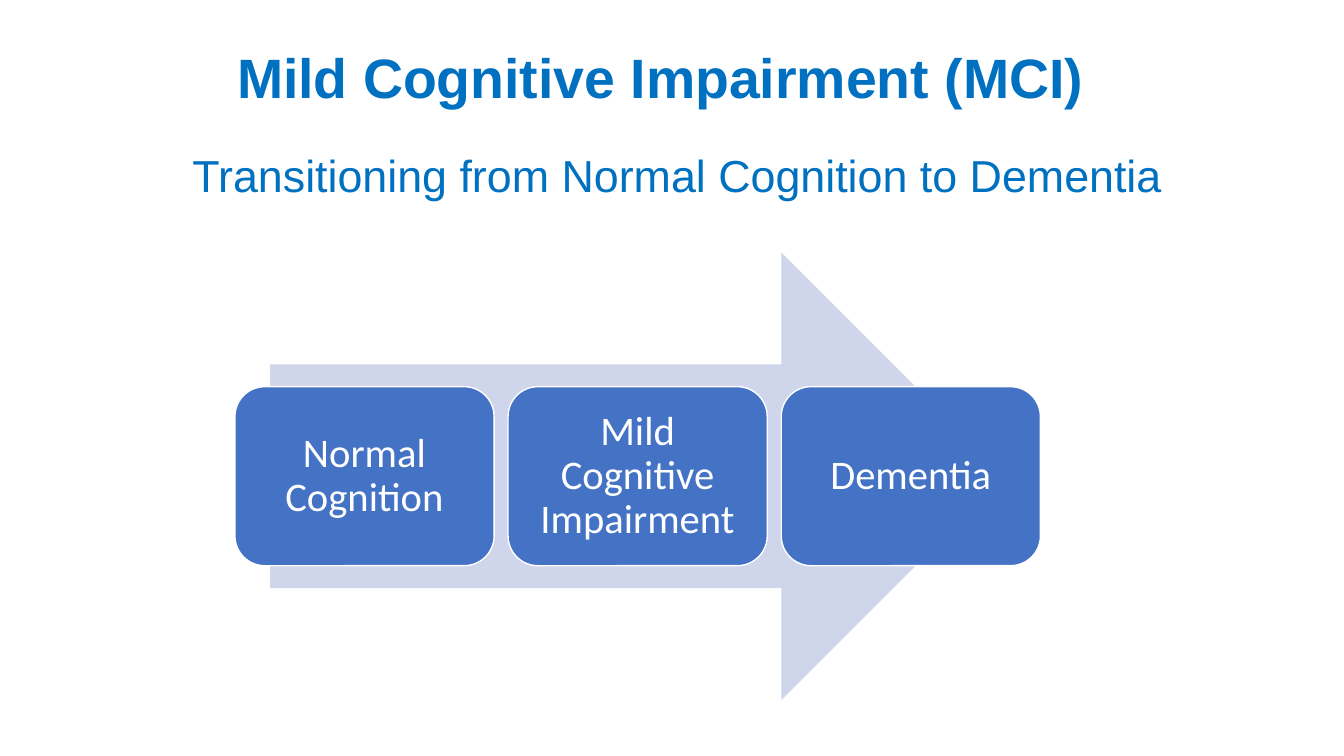
from pptx import Presentation
from pptx.dml.color import RGBColor
from pptx.enum.shapes import MSO_SHAPE as Shape
from pptx.enum.text import MSO_ANCHOR as Anchor, PP_ALIGN as Align
from pptx.util import Cm, Pt

COLORS = {"heading": "0070C0", "arrow": "CFD5EA", "stage": "4472C4", "white": "FFFFFF"}
STAGES = ["Normal Cognition", "Mild Cognitive Impairment", "Dementia"]


def color(name):
    return RGBColor.from_string(COLORS[name])


def place(shape, left, top, width, height):
    shape.left, shape.top = Cm(left), Cm(top)
    shape.width, shape.height = Cm(width), Cm(height)


def write(shape, text, size, font_name, color_name, align, bold=False):
    shape.text_frame.text = text
    para = shape.text_frame.paragraphs[0]
    para.alignment = align
    font = para.runs[0].font
    font.name, font.size, font.bold = font_name, Pt(size), bold
    font.color.rgb = color(color_name)
    return para


def add_filled_shape(page, kind, fill, left, top, width, height):
    shape = page.shapes.add_shape(kind, Cm(left), Cm(top), Cm(width), Cm(height))
    shape.shadow.inherit = False
    shape.fill.solid()
    shape.fill.fore_color.rgb = color(fill)
    return shape


def add_headings(page, left, top):
    title = page.shapes.title
    place(title, left + 1.12, top, 22.86, 3.18)
    title.text_frame.vertical_anchor = Anchor.MIDDLE
    para = write(title, "Mild Cognitive Impairment (MCI)", 39.6, "Arial",
                 "heading", Align.LEFT, bold=True)
    para.line_spacing = 0.9

    subtitle = page.shapes.add_textbox(Cm(left), Cm(top + 3.18), Cm(25.15), Cm(1.62))
    subtitle.text_frame.word_wrap = False
    write(subtitle, "Transitioning from Normal Cognition to Dementia", 32, "Arial",
          "heading", Align.LEFT)


def add_stage(page, text, left, top, width, height):
    stage = add_filled_shape(page, Shape.ROUNDED_RECTANGLE, "stage",
                             left, top, width, height)
    stage.line.color.rgb = color("white")
    stage.line.width = Pt(1)
    frame = stage.text_frame
    frame.word_wrap = True
    frame.vertical_anchor = Anchor.MIDDLE
    frame.margin_left = frame.margin_right = Cm(0.3)
    frame.margin_top = frame.margin_bottom = Cm(0.3)
    para = write(stage, text, 29, "Calibri", "white", Align.CENTER)
    para.line_spacing = 0.9


def add_process(page, left, top, width, height, gap=0.35, arrow_inset=0.89):
    """Draw the stages in a row across the middle of a wide arrow."""
    arrow = add_filled_shape(page, Shape.RIGHT_ARROW, "arrow", left + arrow_inset, top,
                             width - 2 * arrow_inset, height)
    arrow.line.fill.background()
    stage_width = (width - gap * (len(STAGES) - 1)) / len(STAGES)
    stage_height = 0.4 * height
    stage_top = top + (height - stage_height) / 2
    for index, text in enumerate(STAGES):
        add_stage(page, text, left + index * (stage_width + gap), stage_top,
                  stage_width, stage_height)


def main():
    deck = Presentation()
    deck.slide_width, deck.slide_height = Cm(33.87), Cm(19.05)
    page = deck.slides.add_slide(deck.slide_layouts[5])
    add_headings(page, 4.6, 0.43)
    add_process(page, 5.92, 6.36, 20.3, 11.28)
    deck.save("out.pptx")


if __name__ == "__main__":
    main()
